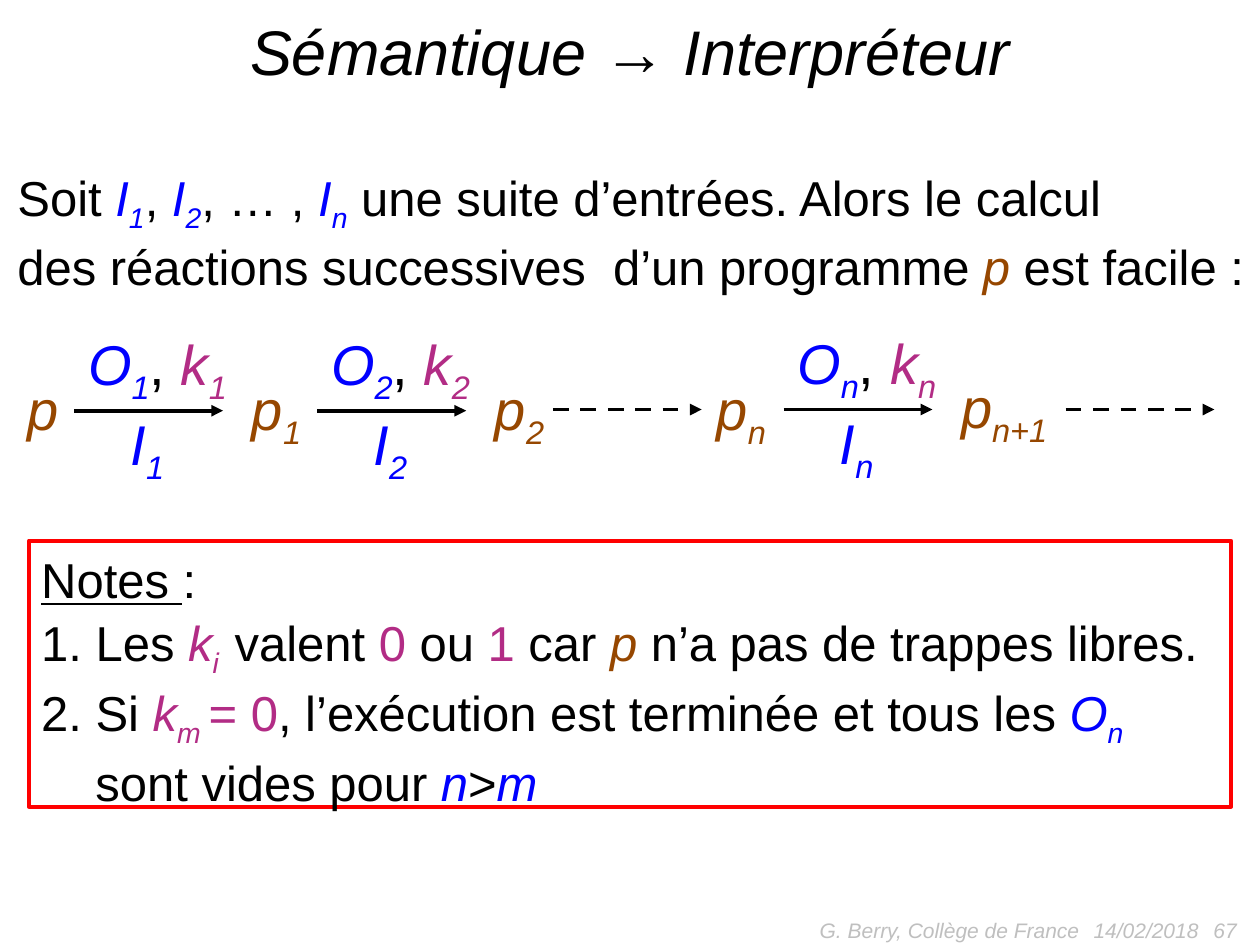
"""Build the slide that goes from semantics to an interpreter."""
import pptx
import pptx.util
import pptx.dml.color
import pptx.enum.dml
import pptx.enum.shapes
import pptx.enum.text
import lxml.etree

Pt = pptx.util.Pt
RGBColor = pptx.dml.color.RGBColor
ALIGN = pptx.enum.text.PP_ALIGN
ANCHOR = pptx.enum.text.MSO_ANCHOR
FIT = pptx.enum.text.MSO_AUTO_SIZE

BLACK = RGBColor(0, 0, 0)
BLUE = RGBColor(0, 0, 255)
BROWN = RGBColor(0x96, 0x47, 0)
PINK = RGBColor(0xB2, 0x2C, 0x85)
GRAY = RGBColor(0xBF, 0xBF, 0xBF)
RED = RGBColor(255, 0, 0)
NS = "http://schemas.openxmlformats.org/drawingml/2006/main"

# style: colour and flags
FORMS = {
    "": (BLACK, ""),
    "line": (BLACK, "u"),
    "head": (BLACK, "i"),
    "foot": (GRAY, "i"),
    "blue": (BLUE, "i"),
    "blue sub": (BLUE, "is"),
    "brown": (BROWN, "i"),
    "brown sub": (BROWN, "is"),
    "pink": (PINK, "i"),
    "pink sub": (PINK, "is"),
    "value": (PINK, ""),
}


def write(paras, spot=None, shape=None, size=32, align=ALIGN.LEFT, anchor=ANCHOR.TOP,
          wrap=False, space=None, indents=None):
    box = shape or slide.shapes.add_textbox(*map(Pt, spot))
    frame = box.text_frame
    frame.word_wrap = wrap
    frame.auto_size = FIT.NONE if wrap else FIT.SHAPE_TO_FIT_TEXT
    frame.vertical_anchor = anchor
    for index, parts in enumerate(paras):
        para = frame.paragraphs[0] if index == 0 else frame.add_paragraph()
        para.alignment = align
        if space:
            para.line_spacing = space
        if indents and indents[index]:
            para._p.get_or_add_pPr().set("marL", str(Pt(indents[index])))
        for words, style in parts:
            color, flags = FORMS[style]
            run = para.add_run()
            run.text = words
            run.font.name = "Arial"
            run.font.size = Pt(size)
            run.font.color.rgb = color
            run.font.italic = "i" in flags
            run.font.underline = "u" in flags
            if "s" in flags:
                run.font._element.set("baseline", "-25000")


def arrow(left, top, dash=False):
    line = slide.shapes.add_connector(
        pptx.enum.shapes.MSO_CONNECTOR.STRAIGHT, Pt(left), Pt(top), Pt(left + 85), Pt(top))
    line.line.color.rgb = BLACK
    line.line.width = Pt(2.25)
    if dash:
        line.line.dash_style = pptx.enum.dml.MSO_LINE.DASH
    tail = lxml.etree.SubElement(line.line._get_or_add_ln(), f"{{{NS}}}tailEnd")
    tail.set("type", "triangle")
    lxml.etree.SubElement(line._element.spPr, f"{{{NS}}}effectLst")


deck = pptx.Presentation()
deck.slide_width, deck.slide_height = Pt(720), Pt(540)
slide = deck.slides.add_slide(deck.slide_layouts[6])

for words, left, width, align in [
    ("14/02/2018", 617.8, 168, ALIGN.LEFT),
    ("67", 545.8, 168, ALIGN.RIGHT),
    ("G. Berry, Collège de France", 396, 228, ALIGN.RIGHT),
]:
    write([[(words, "foot")]], (left, 517, width, 28.8), size=12, align=align,
          anchor=ANCHOR.MIDDLE, wrap=True)

write([[("Sémantique → Interpréteur", "head")]], (18, 3.6, 684, 51), size=36,
      align=ALIGN.CENTER, wrap=True)

write([
    [("Soit ", ""), ("I", "blue"), ("1", "blue sub"), (", ", ""), ("I", "blue"),
     ("2", "blue sub"), (", … , ", ""), ("I", "blue"), ("n", "blue sub"),
     (" une suite d’entrées. Alors le calcul", "")],
    [("des réactions successives  d’un programme ", ""), ("p", "brown"),
     (" est facile :", "")],
], (2.9, 90, 733.7, 78.5), size=28, space=1.05)

write([[("p", "brown")]], (8.6, 210.2, 32.4, 46))
write([[("p", "brown"), ("n", "brown sub")]], (402.5, 210.2, 44.6, 46))

for left, top, sub, after, width in [
    (42.5, 234.7, "1", "1", 44.6),
    (181.4, 234.7, "2", "2", 44.6),
    (447.8, 234, "n", "n+1", 69),
]:
    arrow(left, top)
    write([[("I", "blue"), (sub, "blue sub")]], (left + 25, top - 4.3, 35.3, 46))
    write([[("O", "blue"), (sub, "blue sub"), (", ", ""), ("k", "pink"),
            (sub, "pink sub")]], (left + 0.7, top - 49.7, 98, 46))
    write([[("p", "brown"), (after, "brown sub")]], (left + 94.3, top - 24.5, width, 46))

for left in (316, 609):
    arrow(left, 234, dash=True)

notes = slide.shapes.add_shape(
    pptx.enum.shapes.MSO_SHAPE.RECTANGLE, Pt(16.5), Pt(309), Pt(687), Pt(152))
notes.shadow.inherit = False
notes.fill.background()
notes.line.color.rgb = RED
notes.line.width = Pt(2.25)
write([
    [("Notes ", "line"), (":", "")],
    [("1. Les ", ""), ("k", "pink"), ("i  ", "pink sub"), ("valent ", ""), ("0 ", "value"),
     ("ou ", ""), ("1", "value"), (" car ", ""), ("p", "brown"),
     (" n’a pas de trappes libres.", "")],
    [("2. Si ", ""), ("k", "pink"), ("m ", "pink sub"), ("= 0", "value"),
     (", l’exécution est terminée et tous les ", ""), ("O", "blue"), ("n", "blue sub")],
    [("sont vides pour ", ""), ("n", "blue"), (">", ""), ("m", "blue")],
], shape=notes, size=28, wrap=True, space=1.05, indents=(0, 0, 0, 31))

deck.save("out.pptx")
